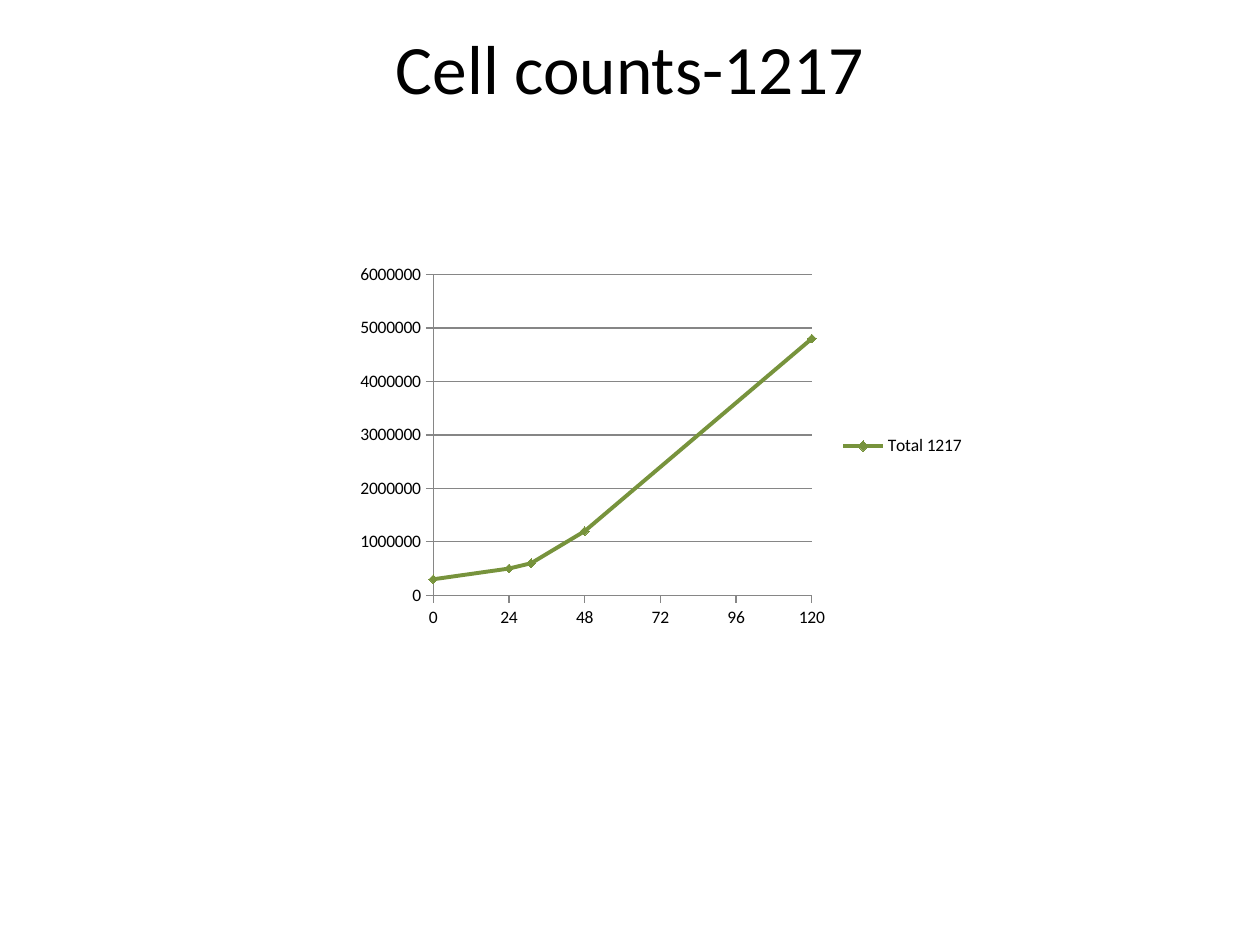
from pptx import Presentation
from pptx.chart.data import XyChartData
from pptx.dml.color import RGBColor
from pptx.enum.chart import XL_CHART_TYPE, XL_LEGEND_POSITION, XL_MARKER_STYLE, XL_TICK_MARK
from pptx.enum.text import MSO_ANCHOR, MSO_AUTO_SIZE, PP_ALIGN
from pptx.util import Inches, Pt

FONT = "Calibri"
BLACK = "000000"
GRAY = "868686"
GREEN = "77933C"
HOURS = [0, 24, 31, 48, 120]
CELL_COUNTS = [300000, 500000, 600000, 1200000, 4800000]


def color(hex_value):
    """Return the RGB colour for a hex string."""
    return RGBColor.from_string(hex_value)


def style_font(font, size):
    """Apply the slide's typeface and text colour at the given size."""
    font.name = FONT
    font.size = Pt(size)
    font.color.rgb = color(BLACK)


def style_line(line, hex_value, width):
    """Set the colour and the width of a line."""
    line.color.rgb = color(hex_value)
    line.width = Pt(width)


def set_title(slide, text):
    """Place and format the title placeholder."""
    title = slide.shapes.title
    title.left, title.top = Inches(0.5), Inches(0.3)
    title.width, title.height = Inches(9), Inches(0.46)
    frame = title.text_frame
    frame.text = text
    frame.word_wrap = True
    frame.auto_size = MSO_AUTO_SIZE.NONE
    frame.vertical_anchor = MSO_ANCHOR.MIDDLE
    heading = frame.paragraphs[0]
    heading.alignment = PP_ALIGN.CENTER
    style_font(heading.runs[0].font, 39.6)


def style_axis(axis, maximum, step, gridlines):
    """Set the scale, ticks and gridlines of an axis."""
    axis.minimum_scale = 0
    axis.maximum_scale = maximum
    axis.major_unit = step
    axis.major_tick_mark = XL_TICK_MARK.OUTSIDE
    axis.minor_tick_mark = XL_TICK_MARK.NONE
    axis.has_major_gridlines = gridlines
    style_line(axis.format.line, GRAY, 0.75)
    axis.tick_labels.number_format = "General"
    axis.tick_labels.number_format_is_linked = False
    if gridlines:
        style_line(axis.major_gridlines.format.line, GRAY, 0.75)


def style_series(series):
    """Format a growth curve and its markers."""
    series.smooth = False
    style_line(series.format.line, GREEN, 2.25)
    marker = series.marker
    marker.style = XL_MARKER_STYLE.DIAMOND
    marker.size = 5
    marker.format.fill.solid()
    marker.format.fill.fore_color.rgb = color(GREEN)
    style_line(marker.format.line, GREEN, 0.75)


def add_growth_chart(slide):
    """Add the scatter chart of cell counts over time."""
    growth = XyChartData()
    total = growth.add_series("Total 1217")
    for hour, count in zip(HOURS, CELL_COUNTS):
        total.add_data_point(hour, count)
    chart = slide.shapes.add_chart(
        XL_CHART_TYPE.XY_SCATTER_LINES,
        Inches(2.76), Inches(2.04), Inches(5), Inches(3), growth,
    ).chart
    style_font(chart.font, 10)
    chart.has_title = False
    chart.has_legend = True
    chart.legend.position = XL_LEGEND_POSITION.RIGHT
    chart.legend.include_in_layout = False
    chart.plots[0].vary_by_categories = False
    style_axis(chart.category_axis, 120, 24, False)
    style_axis(chart.value_axis, 6000000, 1000000, True)
    style_series(chart.plots[0].series[0])


def main():
    """Build and save the slide."""
    deck = Presentation()
    deck.slide_width, deck.slide_height = Inches(10), Inches(7.5)
    slide = deck.slides.add_slide(deck.slide_layouts[5])
    set_title(slide, "Cell counts-1217")
    add_growth_chart(slide)
    deck.save("out.pptx")


if __name__ == "__main__":
    main()
